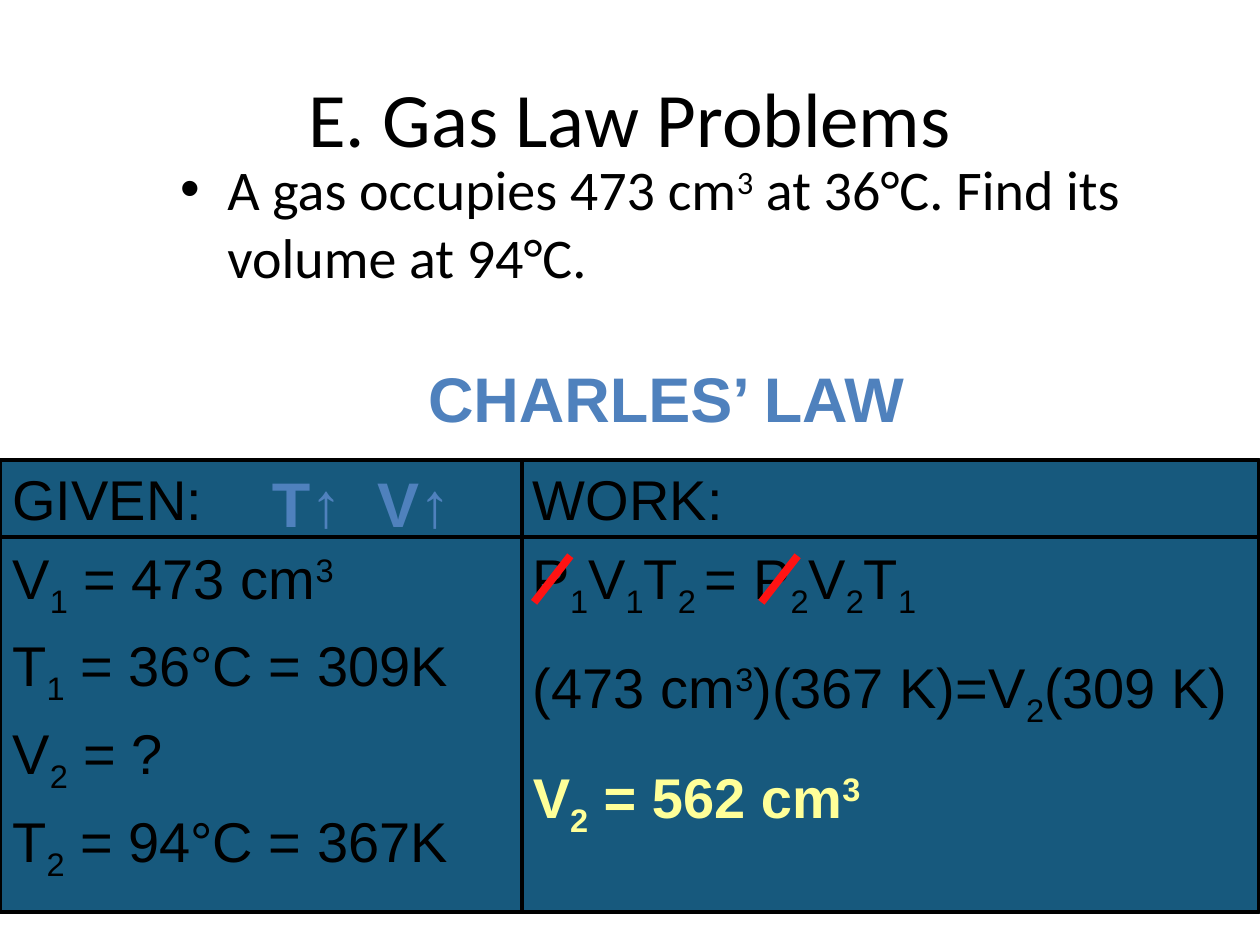
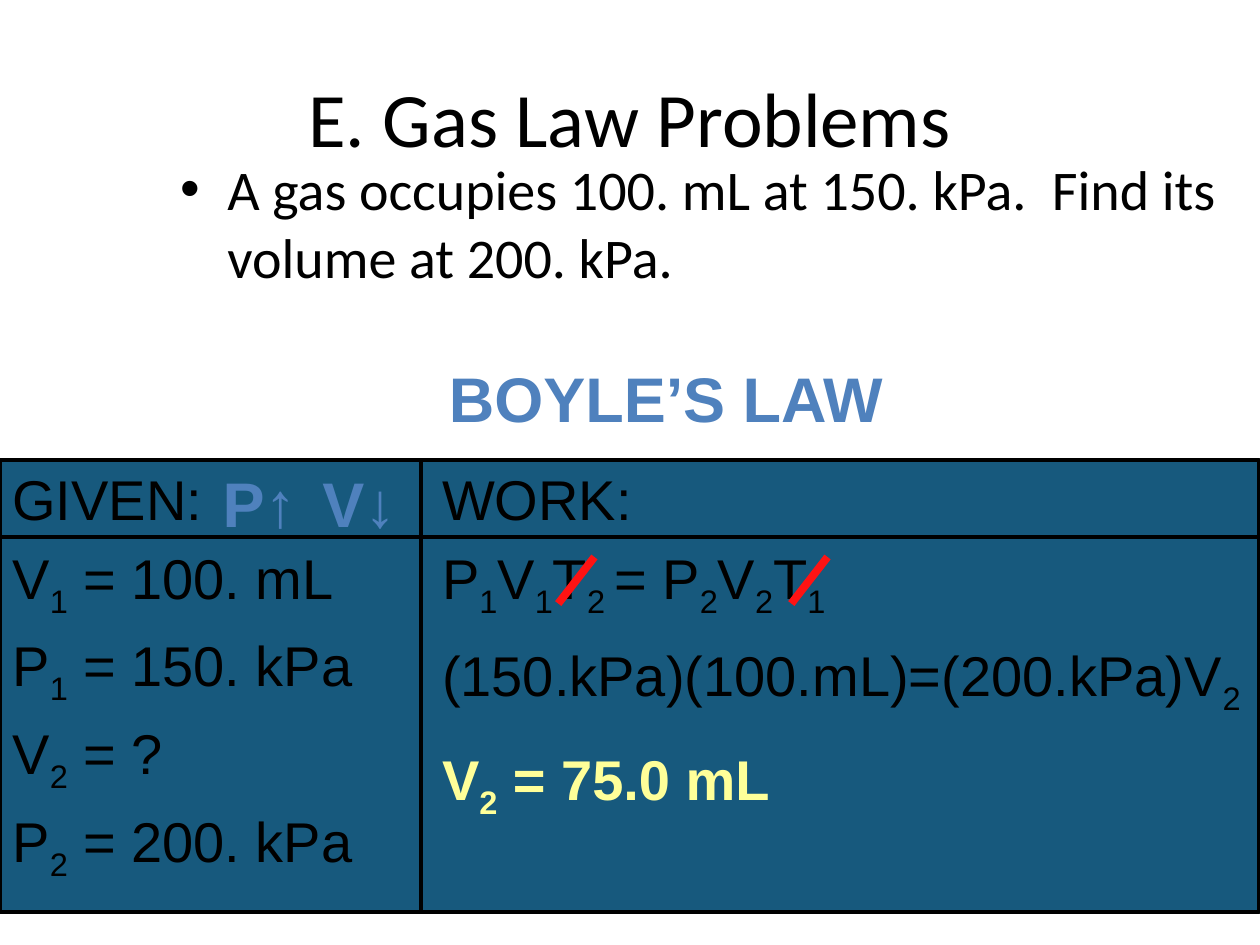
from lxml import etree
from pptx import Presentation
from pptx.dml.color import RGBColor
from pptx.enum import shapes, text
from pptx.oxml import ns
from pptx.util import Pt

BLACK, PANEL, ACCENT, STRIKE, ANSWER = "000000", "17597D", "4F81BD", "FF1313", "FFFF99"
BASELINES = {"_": "-25000", "^": "30000"}
PANEL_TOP, PANEL_HEIGHT, RULE_Y = 262.8, 258.5, 306.7
TEXT_TOP = 262.1

problems = [
    dict(
        question="A gas occupies 473 cm|^3| at 36°C. Find its volume at 94°C.",
        law="CHARLES’ LAW",
        given=["V|_1| = 473 cm|^3", "T|_1| = 36°C = 309K", "V|_2| = ?", "T|_2| = 94°C = 367K"],
        given_width=297.4, divider_x=298.1, work_x=297.4,
        trends=[("T↑", 148.3, 64.8, "LEFT"), ("V↑", 198.7, 75.6, "CENTER")],
        strikes=[305.2, 435.1], strike_y=344.2,
        solution=["(473 cm|^3|)(367 K)=V|_2|(309 K)", "V|_2| = 562 cm|^3"],
        solution_y=369.4, solution_gap=0.6,
    ),
    dict(
        question="A gas occupies 100. mL at 150. kPa.  Find its volume at 200. kPa.",
        law="BOYLE’S LAW",
        given=["V|_1| = 100. mL", "P|_1| = 150. kPa", "V|_2| = ?", "P|_2| = 200. kPa"],
        given_width=258.5, divider_x=240.5, work_x=245.5,
        trends=[("P↑", 120.2, 64.8, "LEFT"), ("V↓", 171.4, 67.7, "CENTER")],
        strikes=[319, 452.2], strike_y=344.9,
        solution=["(150.kPa)(100.mL)=(200.kPa)V|_2", "V|_2| = 75.0 mL"],
        solution_y=362.2, solution_gap=0.5,
    ),
]


def write(slide, lines, x, y, width, height, size=32, font="Arial", color=BLACK,
          bold=False, align="LEFT", anchor="TOP", gap=0.2):
    frame = slide.shapes.add_textbox(Pt(x), Pt(y), Pt(width), Pt(height)).text_frame
    frame.word_wrap = True
    frame.vertical_anchor = text.MSO_ANCHOR[anchor]
    for index, line in enumerate(lines):
        paragraph = frame.add_paragraph() if index else frame.paragraphs[0]
        paragraph.alignment = text.PP_ALIGN[align]
        paragraph.space_before = Pt(gap * size)
        for piece in line.split("|"):
            run = paragraph.add_run()
            run.text = piece.lstrip("_^")
            run.font.size, run.font.name, run.font.bold = Pt(size), font, bold
            run.font.color.rgb = RGBColor.from_string(color)
            if piece[0] in BASELINES:
                run._r.get_or_add_rPr().set("baseline", BASELINES[piece[0]])
    return frame


def draw_line(slide, x1, y1, x2, y2, color=BLACK, weight=2.25):
    line = slide.shapes.add_connector(
        shapes.MSO_CONNECTOR.STRAIGHT, Pt(x1), Pt(y1), Pt(x2), Pt(y2))
    line.line.color.rgb = RGBColor.from_string(color)
    line.line.width = Pt(weight)
    etree.SubElement(line._element.spPr, ns.qn("a:effectLst"))


deck = Presentation()
deck.slide_width, deck.slide_height = Pt(720), Pt(540)

for problem in problems:
    slide = deck.slides.add_slide(deck.slide_layouts[6])

    panel = slide.shapes.add_shape(
        shapes.MSO_SHAPE.RECTANGLE, 0, Pt(PANEL_TOP), Pt(719.3), Pt(PANEL_HEIGHT))
    panel.shadow.inherit = False
    panel.fill.solid()
    panel.fill.fore_color.rgb = RGBColor.from_string(PANEL)
    panel.line.color.rgb = RGBColor.from_string(BLACK)
    panel.line.width = Pt(2.25)

    work_x = problem["work_x"]
    write(slide, ["GIVEN:"] + problem["given"], 0, TEXT_TOP, problem["given_width"], 278)
    write(slide, ["WORK:", "P|_1|V|_1|T|_2 |= P|_2|V|_2|T|_1"],
          work_x, TEXT_TOP, 720 - work_x, 110)
    write(slide, ["E. Gas Law Problems"], 36, 21.6, 648, 90, size=44, font="Calibri",
          align="CENTER", anchor="MIDDLE", gap=0)

    question = write(slide, [problem["question"]], 95.8, 85, 612, 172.8, font="Calibri", gap=1)
    bullet = question.paragraphs[0]._p.get_or_add_pPr()
    bullet.set("marL", str(Pt(27)))
    bullet.set("indent", str(Pt(-27)))
    etree.SubElement(bullet, ns.qn("a:buFont"), typeface="Arial")
    etree.SubElement(bullet, ns.qn("a:buChar"), char="•")

    draw_line(slide, problem["divider_x"], PANEL_TOP,
              problem["divider_x"], PANEL_TOP + PANEL_HEIGHT)
    draw_line(slide, 0, RULE_Y, 720, RULE_Y)

    write(slide, [problem["law"]], 178.6, 201.6, 403.9, 46, size=36, color=ACCENT,
          bold=True, align="CENTER")
    for trend, x, width, align in problem["trends"]:
        write(slide, [trend], x, TEXT_TOP, width, 46, size=36, color=ACCENT,
              bold=True, align=align)

    for x in problem["strikes"]:
        y = problem["strike_y"]
        draw_line(slide, x, y, x + 20.7, y - 26.6, STRIKE, 4.5)

    solution = write(slide, problem["solution"], work_x, problem["solution_y"],
                     720 - work_x, 122, gap=problem["solution_gap"])
    for run in solution.paragraphs[-1].runs:
        run.font.bold = True
        run.font.color.rgb = RGBColor.from_string(ANSWER)

deck.save("out.pptx")
